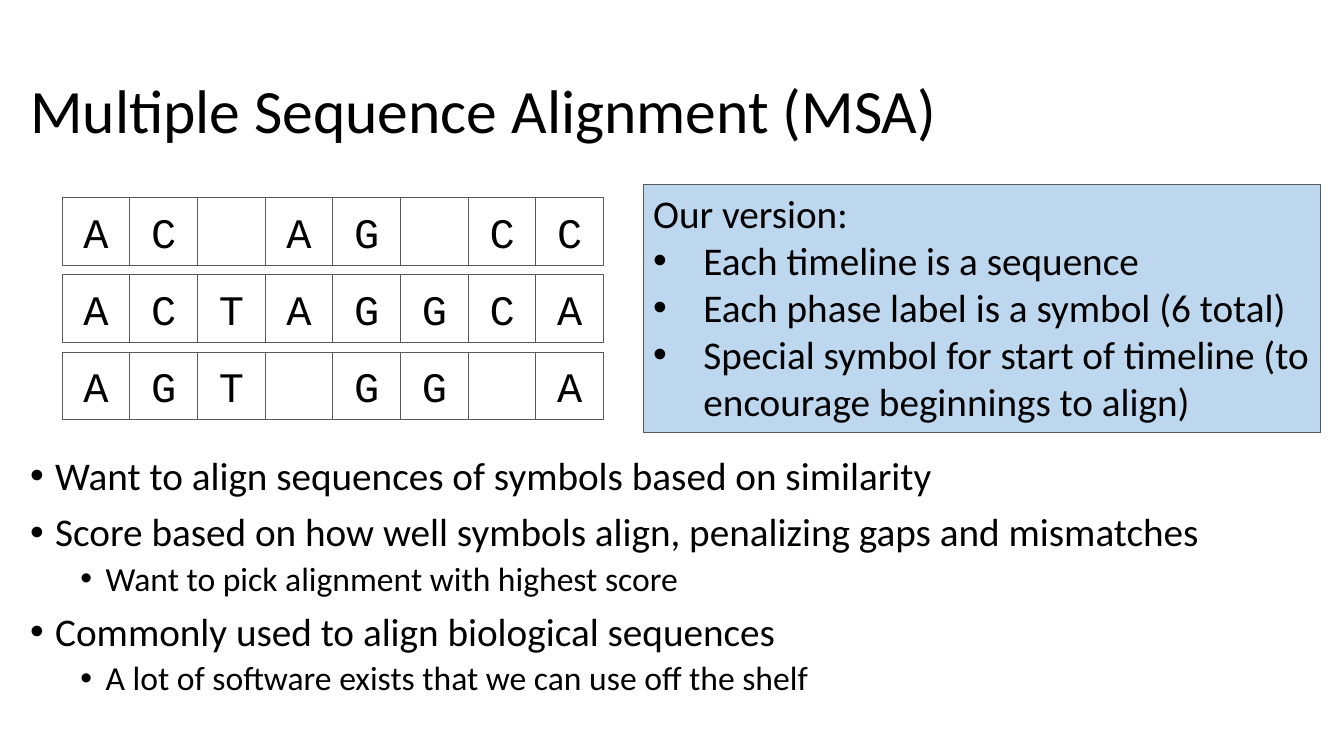
from lxml import etree
from pptx import Presentation
from pptx.dml.color import RGBColor
from pptx.enum.shapes import MSO_SHAPE
from pptx.enum.text import MSO_ANCHOR, PP_ALIGN
from pptx.oxml.ns import qn
from pptx.util import Pt

RECT = MSO_SHAPE.RECTANGLE
TOP, MIDDLE = MSO_ANCHOR.TOP, MSO_ANCHOR.MIDDLE
LEFT, CENTER = PP_ALIGN.LEFT, PP_ALIGN.CENTER

BLACK = RGBColor(0, 0, 0)
GRAY = RGBColor(0x59, 0x59, 0x59)
BLUE = RGBColor(0xBD, 0xD7, 0xEE)

# Paragraph formats; margin and hang (bullet indent) are in points
HEAD = {"size": 44, "line_spacing": 0.9}
CELL = {"font": "Courier New", "size": 30, "alignment": CENTER}
NOTE = {"size": 28}
ITEM = {"size": 28, "margin": 36, "hang": 36}
MAIN = {"size": 28, "margin": 18, "hang": 18,
        "line_spacing": 0.9, "space_before": Pt(10)}
SUB = {"size": 24, "level": 1, "margin": 54, "hang": 18,
       "line_spacing": 0.9, "space_before": Pt(5)}


class Deck:
    """Holds the style and the current slide."""

    font = "Calibri"

    def __init__(self, width, height):
        self.prs = Presentation()
        self.prs.slide_width, self.prs.slide_height = Pt(width), Pt(height)
        self.slide = self.prs.slides.add_slide(self.prs.slide_layouts[6])

    def label(self, shape, lines, anchor):
        frame = shape.text_frame
        frame.word_wrap = True
        frame.vertical_anchor = anchor
        for i, (text, style) in enumerate(lines):
            para = frame.add_paragraph() if i else frame.paragraphs[0]
            form = {"alignment": LEFT, **style}
            size = form.pop("size")
            face = form.pop("font", self.font)
            margin, hang = form.pop("margin", 0), form.pop("hang", 0)
            for key, value in form.items():
                setattr(para, key, value)
            run = para.add_run()
            run.text = text
            run.font.color.rgb = BLACK
            for key, value in {"name": face, "size": Pt(size)}.items():
                setattr(run.font, key, value)
            if hang:
                self.bullet(para, margin, hang)

    def bullet(self, para, margin, hang):
        props = para._p.get_or_add_pPr()
        props.set("marL", str(Pt(margin)))
        props.set("indent", str(-Pt(hang)))
        etree.SubElement(props, qn("a:buFont")).set("typeface", "Arial")
        etree.SubElement(props, qn("a:buChar")).set("char", "•")

    def text(self, x, y, w, h, lines, anchor=TOP):
        box = self.slide.shapes.add_textbox(Pt(x), Pt(y), Pt(w), Pt(h))
        self.label(box, lines, anchor)

    def rect(self, x, y, w, h, lines, fill=None, anchor=MIDDLE):
        box = self.slide.shapes.add_shape(RECT, Pt(x), Pt(y), Pt(w), Pt(h))
        box.shadow.inherit = False
        if fill is None:
            box.fill.background()
        else:
            box.fill.solid()
            box.fill.fore_color.rgb = fill
        box.line.color.rgb = GRAY
        box.line.width = Pt(0.75)
        self.label(box, lines, anchor)


def main():
    deck = Deck(960, 540)

    # Title
    deck.text(14.4, 28.8, 828, 104.4,
              [("Multiple Sequence Alignment (MSA)", HEAD)], MIDDLE)

    # Aligned sequences, a space marks a gap
    side, pitch = 48.35, 55.2
    for row, seq in enumerate(("AC AG CC", "ACTAGGCA", "AGT GG A")):
        for col, mark in enumerate(seq):
            lines = [(mark, CELL)] if mark.strip() else []
            deck.rect(44.4 + col * side, 141.1 + row * pitch,
                      side, side, lines)

    # Bullets below
    deck.text(14.4, 322.6, 945, 213, [
        ("Want to align sequences of symbols based on similarity", MAIN),
        ("Score based on how well symbols align, "
         "penalizing gaps and mismatches", MAIN),
        ("Want to pick alignment with highest score", SUB),
        ("Commonly used to align biological sequences", MAIN),
        ("A lot of software exists that we can use off the shelf", SUB),
    ])

    # Callout
    deck.rect(459.4, 131.8, 483.8, 177.1, [
        ("Our version:", NOTE),
        ("Each timeline is a sequence", ITEM),
        ("Each phase label is a symbol (6 total)", ITEM),
        ("Special symbol for start of timeline "
         "(to encourage beginnings to align)", ITEM),
    ], BLUE, TOP)

    deck.prs.save("out.pptx")


if __name__ == "__main__":
    main()
